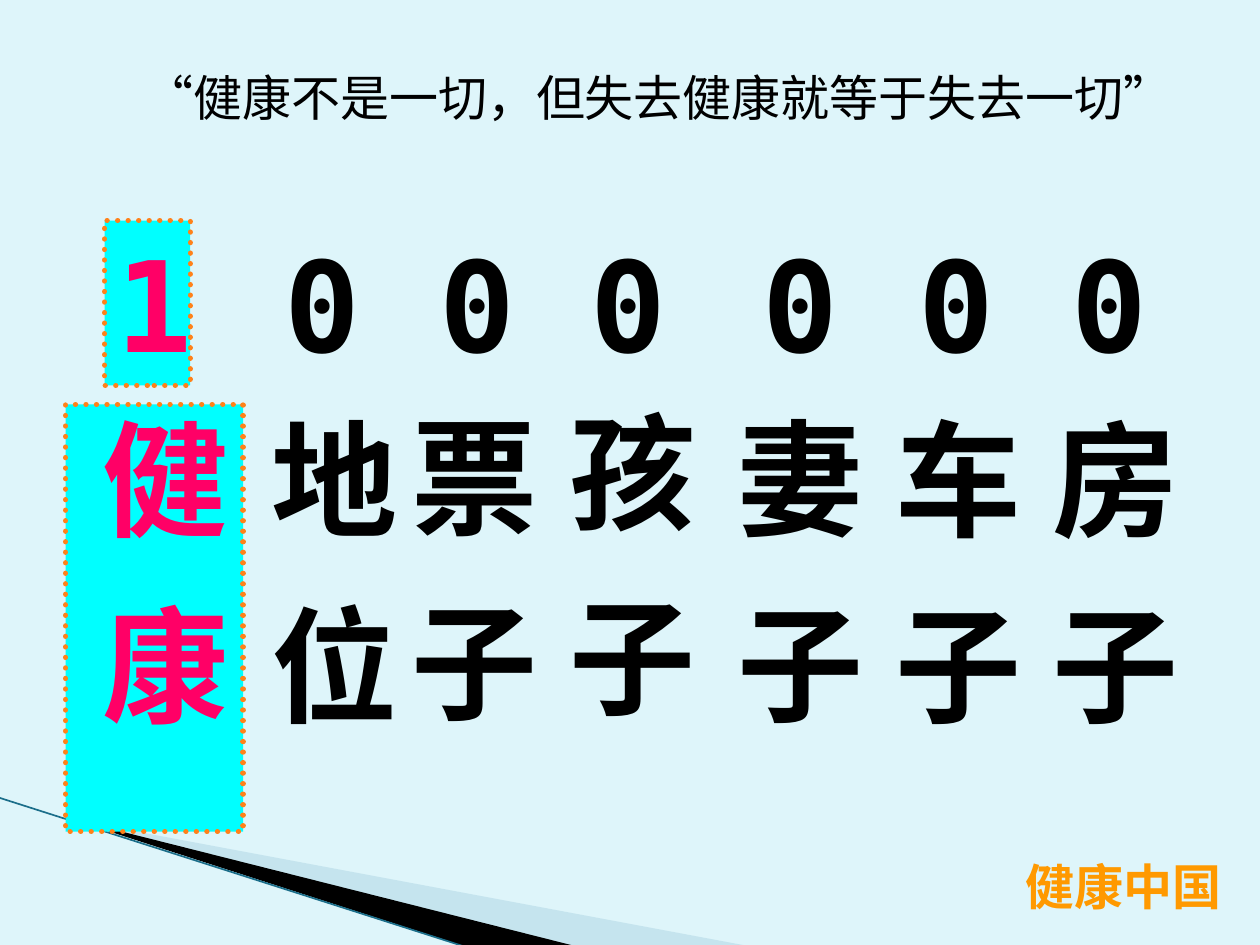
import pptx
import pptx.util
import pptx.dml.color
import pptx.enum.dml
import pptx.enum.shapes
import pptx.enum.text
import pptx.oxml.ns
from lxml import etree

RGB = pptx.dml.color.RGBColor.from_string
qn = pptx.oxml.ns.qn
ALIGN = pptx.enum.text.PP_ALIGN

theme = {
    "font": "DejaVu Sans Mono",
    "background": "DEF5FA", "wedge": "A0CBDC", "edge": "1B6E8A", "black": "000000",
    "box": "00FFFF", "border": "FF8119", "highlight": "FF0066", "footer": "FF9900",
    "large": 72, "small": 28, "character_gap": 850,
}

presentation = pptx.Presentation()
presentation.slide_width = pptx.util.Inches(10)
presentation.slide_height = pptx.util.Inches(7.5)
slide = presentation.slides.add_slide(presentation.slide_layouts[6])
slide.background.fill.solid()
slide.background.fill.fore_color.rgb = RGB(theme["background"])

# Grid of 10 columns by 7.5 rows
column = presentation.slide_width / 10
row = presentation.slide_height / 7.5


def grid(*lengths):
    """Turn alternating columns and rows into slide lengths."""
    return [round(length * (row if index % 2 else column)) for index, length in enumerate(lengths)]


def add_text(text, place, color, size="large", bold=True, boxed=False, vertical=False,
             align=ALIGN.LEFT, wrap=True, line_spacing=1.0):
    if boxed:
        shape = slide.shapes.add_shape(pptx.enum.shapes.MSO_SHAPE.RECTANGLE, *grid(*place))
        shape.shadow.inherit = False
        shape.fill.solid()
        shape.fill.fore_color.rgb = RGB(theme["box"])
        shape.line.color.rgb = RGB(theme["border"])
        shape.line.width = pptx.util.Pt(3)
        shape.line.dash_style = pptx.enum.dml.MSO_LINE.ROUND_DOT
        shape._element.spPr.find(qn("a:ln")).set("cap", "rnd")
    else:
        shape = slide.shapes.add_textbox(*grid(*place))
    frame = shape.text_frame
    frame.word_wrap = wrap
    frame.vertical_anchor = pptx.enum.text.MSO_ANCHOR.TOP
    paragraph = frame.paragraphs[0]
    paragraph.alignment = align
    paragraph.line_spacing = line_spacing
    run = paragraph.add_run()
    run.text = text
    formats = {"name": theme["font"], "size": pptx.util.Pt(theme[size]), "bold": bold}
    for name, value in formats.items():
        setattr(run.font, name, value)
    run.font.color.rgb = RGB(theme[color])
    if vertical:
        frame._txBody.bodyPr.set("vert", "eaVert")
        run.font._element.set("spc", str(theme["character_gap"]))


# Corner wedges
wedges = [
    ("wedge", 40, [(0.55, 6.5), (5.95, 7.51), (4.56, 7.51)]),
    ("black", 100, [(0.53, 6.49), (4.57, 7.51), (3.72, 7.52)]),
]
for color, opacity, points in wedges:
    corners = [grid(*point) for point in points]
    builder = slide.shapes.build_freeform(*corners[0], scale=1.0)
    builder.add_line_segments(corners[1:], close=True)
    wedge = builder.convert_to_shape()
    wedge.shadow.inherit = False
    wedge.fill.solid()
    wedge.fill.fore_color.rgb = RGB(theme[color])
    wedge.line.fill.background()
    if opacity < 100:
        color_element = wedge._element.spPr.find(".//" + qn("a:srgbClr"))
        etree.SubElement(color_element, qn("a:alpha")).set("val", str(opacity * 1000))

# Edge line under the wedges
edge = slide.shapes.add_connector(pptx.enum.shapes.MSO_CONNECTOR.STRAIGHT, *grid(-0.01, 6.33, 3.71, 7.52))
edge.line.color.rgb = RGB(theme["edge"])
edge.line.width = pptx.util.Pt(0.95)
etree.SubElement(edge._element.spPr, qn("a:effectLst"))

# Vertical words, each with a zero above it: word, left, top, zero left
words = [
    ("地 位", 1.86, 3.21, 2.16),
    ("票 子", 2.97, 3.19, 3.39),
    ("孩 子", 4.22, 3.15, 4.59),
    ("妻 子", 5.56, 3.2, 5.95),
    ("车 子", 6.81, 3.21, 7.19),
    ("房 子", 8.06, 3.21, 8.41),
]
for word, left, top, zero_left in words:
    add_text(word, (left, top, 1.41, 3.2), "black", vertical=True)
    add_text("0", (zero_left, 1.75, 1, 1.31), "black")

# Highlighted one and health
add_text("1", (0.83, 1.75, 0.68, 1.31), "highlight", boxed=True)
add_text("健 康", (0.52, 3.21, 1.41, 3.39), "highlight", boxed=True, vertical=True)

# Quotation and footer
add_text("“健康不是一切，但失去健康就等于失去一切”", (1, 0.58, 8.45, 0.48), "black", size="small",
         bold=False, align=ALIGN.CENTER, wrap=False, line_spacing=0.8)
add_text("健康中国", (7.83, 6.75, 2.17, 0.57), "footer", size="small", align=ALIGN.CENTER)

presentation.save("out.pptx")
